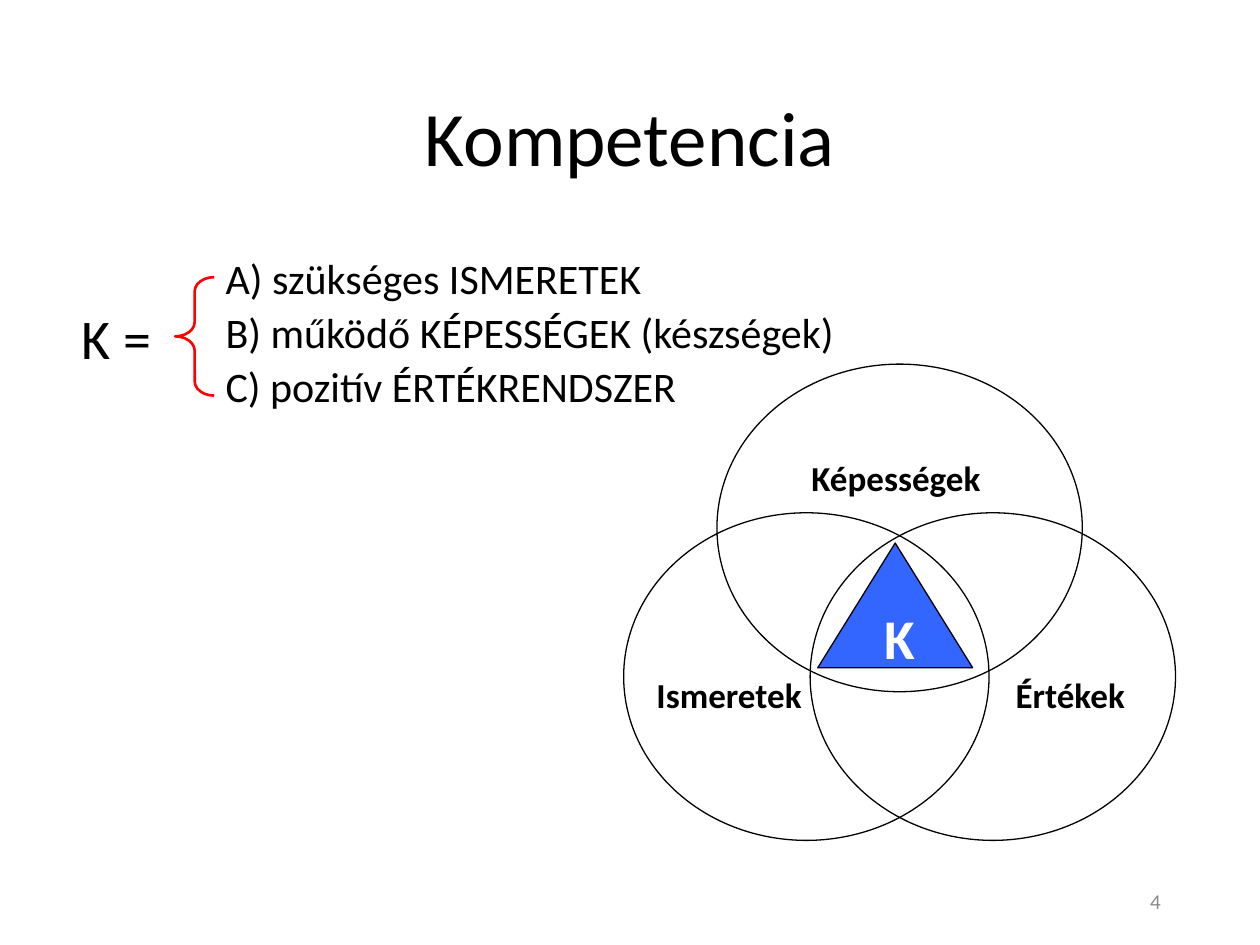
from dataclasses import dataclass

from lxml import etree
from pptx import Presentation
from pptx.dml.color import RGBColor
from pptx.enum.shapes import MSO_SHAPE
from pptx.enum.text import MSO_ANCHOR, PP_ALIGN
from pptx.oxml.ns import qn
from pptx.util import Inches, Pt

OVAL, BRACE = MSO_SHAPE.OVAL, MSO_SHAPE.LEFT_BRACE
RECT, WEDGE = MSO_SHAPE.RECTANGLE, MSO_SHAPE.ISOSCELES_TRIANGLE
TOP, MID = MSO_ANCHOR.TOP, MSO_ANCHOR.MIDDLE
LEFT, CENTER, RIGHT = PP_ALIGN.LEFT, PP_ALIGN.CENTER, PP_ALIGN.RIGHT


@dataclass(frozen=True)
class Theme:
    """Colours, font and type sizes of the slide."""
    font: str = "Calibri"
    ink: str = "000000"
    white: str = "FFFFFF"
    blue: str = "3366FF"
    red: str = "FF0000"
    gray: str = "898989"
    title: int = 44
    big: int = 32
    body: int = 24
    label: int = 20
    small: int = 12


THEME = Theme()


def place(shape, x, y, w, h):
    """Move a shape to a box in inches."""
    shape.left, shape.top = Inches(x), Inches(y)
    shape.width, shape.height = Inches(w), Inches(h)


def write(shape, *lines, size=THEME.body, color=THEME.ink, bold=False,
          align=LEFT, anchor=TOP, pad=0.1, pitch=1.0, before=0):
    """Fill a shape with formatted lines and return the paragraphs."""
    frame = shape.text_frame
    frame.word_wrap, frame.vertical_anchor = True, anchor
    frame.margin_left = frame.margin_right = Inches(pad)
    frame.margin_top = frame.margin_bottom = Inches(0.05)
    frame.text = "\n".join(lines)
    for para in frame.paragraphs:
        para.alignment, para.line_spacing = align, pitch
        para.space_before = Pt(before)
        font = para.runs[0].font
        font.name, font.size, font.bold = THEME.font, Pt(size), bold
        font.color.rgb = RGBColor.from_string(color)
    return frame.paragraphs


def note(slide, box, text, **style):
    """Add a text box."""
    shape = slide.shapes.add_textbox(*map(Inches, box))
    write(shape, text, **style)


def draw(slide, kind, box, fill=None, line=None, width=0.75):
    """Add a preset shape with optional fill and line."""
    shape = slide.shapes.add_shape(kind, *map(Inches, box))
    shape.shadow.inherit = False
    for part, color in ((shape.fill, fill), (shape.line.fill, line)):
        if color:
            part.solid()
            part.fore_color.rgb = RGBColor.from_string(color)
        else:
            part.background()
    if line:
        shape.line.width = Pt(width)
    return shape


def head(slide, box):
    """Place the title."""
    title = slide.shapes.title
    place(title, *box)
    write(title, "Kompetencia", size=THEME.title, align=CENTER,
          anchor=MID, pitch=0.9)


def terms(slide, box):
    """Place the lettered list of parts."""
    body = slide.placeholders[1]
    place(body, *box)
    lines = write(body, "A) szükséges ISMERETEK",
                  "B) működő KÉPESSÉGEK (készségek)",
                  "C) pozitív ÉRTÉKRENDSZER", pitch=0.9, before=5)
    for para in lines:
        para.level = 2
        props = para._p.get_or_add_pPr()
        props.set("marL", str(Inches(1.25)))
        props.set("indent", str(Inches(-0.25)))
        etree.SubElement(props, qn("a:buNone"))


def sum_up(slide, x, y, w, h):
    """Place the formula start and its brace."""
    note(slide, (x, y, 0.92, h), "K =", size=THEME.big, anchor=MID)
    brace = draw(slide, BRACE, (x + w - 0.31, y + 0.15, 0.31, 0.94),
                 line=THEME.red, width=1.5)
    brace.adjustments[0] = 0.365


def venn(slide, x, y, w, h):
    """Place three crossing ovals with labels and a core."""
    wide, high = 2.9, 2.6
    step, drop = w - wide, h - high
    for text, dx, dy, size in (("Ismeretek", 0.24, 2.41, 1.25),
                               ("Értékek", 3.09, 2.41, 1.05),
                               ("Képességek", 1.47, 0.68, 1.57)):
        note(slide, (x + dx, y + dy, size, 0.44), text,
             size=THEME.label, bold=True, pad=0.02)
    draw(slide, WEDGE, (x + 1.54, y + 1.42, 1.23, 0.99),
         fill=THEME.blue, line=THEME.ink)
    for dx, dy in ((step, drop), (0, drop), (step / 2, 0)):
        draw(slide, OVAL, (x + dx, y + dy, wide, high), line=THEME.ink)
    core = draw(slide, RECT, (x + 1.98, y + 1.85, 0.43, 0.5),
                fill=THEME.blue)
    write(core, "K", size=THEME.big, color=THEME.white, bold=True,
          align=CENTER, pad=0.02)


def main():
    """Build and save the slide."""
    deck = Presentation()
    deck.slide_width, deck.slide_height = Inches(10), Inches(7.5)
    slide = deck.slides.add_slide(deck.slide_layouts[1])
    head(slide, (0.69, 0.4, 8.62, 1.45))
    terms(slide, (0.69, 2, 8.62, 4.76))
    venn(slide, 4.95, 2.89, 4.38, 3.78)
    note(slide, (7.06, 6.95, 2.25, 0.4), "4", size=THEME.small,
         color=THEME.gray, align=RIGHT, anchor=MID)
    sum_up(slide, 0.55, 2.05, 1.15, 1.25)
    deck.save("out.pptx")


if __name__ == "__main__":
    main()
